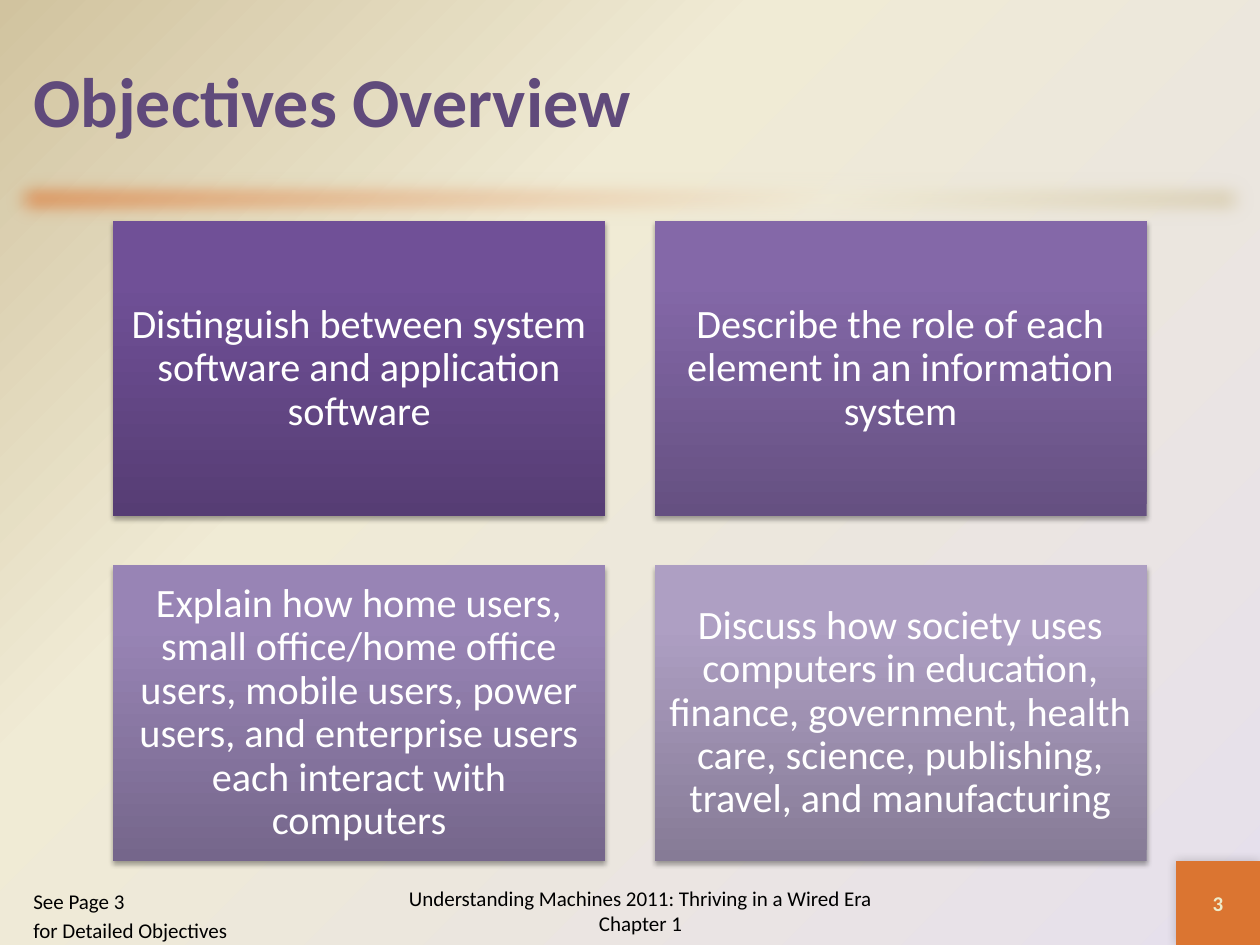
import dataclasses
import typing

import lxml.etree
import pptx
import pptx.dml.color
import pptx.enum.shapes
import pptx.enum.text
import pptx.oxml
import pptx.oxml.ns
import pptx.util

Pt = pptx.util.Pt
ALIGN = pptx.enum.text.PP_ALIGN
ANCHOR = pptx.enum.text.MSO_ANCHOR
Stops = tuple[tuple[int, str], ...]


@dataclasses.dataclass(frozen=True)
class Theme:
    font: str = "Calibri"
    title: str = "604A7B"
    text: str = "000000"
    card_text: str = "FFFFFF"
    number: str = "EEEBCA"
    accent: str = "DB7531"
    cream: str = "F0EBD5"
    sand: str = "D1C39F"
    lilac: str = "E6E0EC"
    title_size: float = 40
    card_size: float = 23
    small_size: float = 12


@dataclasses.dataclass(frozen=True)
class Box:
    left: float
    top: float
    width: float
    height: float


@dataclasses.dataclass(frozen=True)
class Style:
    size: float
    color: str
    bold: bool = False
    align: ALIGN = ALIGN.LEFT
    anchor: ANCHOR = ANCHOR.MIDDLE
    line_spacing: typing.Optional[float] = None


@dataclasses.dataclass(frozen=True)
class Card:
    text: str
    bottom: str
    middle: str
    top: str


@dataclasses.dataclass(frozen=True)
class Shadow:
    alpha: int
    blur: float
    distance: float
    angle: int


THEME = Theme()
CARDS = (
    Card("Distinguish between system software and application software",
         "563D74", "705097", "704F99"),
    Card("Describe the role of each element in an information system",
         "655081", "8468A8", "8467AA"),
    Card("Explain how home users, small office/home office users, mobile users, "
         "power users, and enterprise users each interact with computers",
         "75668B", "9884B5", "9984B7"),
    Card("Discuss how society uses computers in education, finance, government, "
         "health care, science, publishing, travel, and manufacturing",
         "867B96", "AE9FC3", "AE9FC4"),
)
SLIDE_W, SLIDE_H = 720, 540
CARD_W = 281.25
CARD_H = CARD_W * 0.6
CARD_GAP = CARD_W * 0.1
CARD_LEFT = (SLIDE_W - 2 * CARD_W - CARD_GAP) / 2
CARD_TOP = 126.2
NUMBER_SIDE = 48


def element(xml: str) -> lxml.etree._Element:
    tag, rest = xml.split(" ", 1)
    return pptx.oxml.parse_xml(f'{tag} {pptx.oxml.ns.nsdecls("a")} {rest}')


def gradient(fill: typing.Any, parent: lxml.etree._Element, stops: Stops, direction: str) -> None:
    fill.solid()
    marks = "".join(
        f'<a:gs pos="{pos * 1000}"><a:srgbClr val="{color}"/></a:gs>' for pos, color in stops
    )
    solid = parent.find(pptx.oxml.ns.qn("a:solidFill"))
    parent.replace(solid, element(
        f'<a:gradFill rotWithShape="1"><a:gsLst>{marks}</a:gsLst>{direction}</a:gradFill>'
    ))


def linear(angle: int) -> str:
    return f'<a:lin ang="{angle * 60000}" scaled="0"/>'


def add_effect(sp: typing.Any, xml: str) -> None:
    sp._element.spPr.find(pptx.oxml.ns.qn("a:effectLst")).append(element(xml))


def add_shadow(sp: typing.Any, shadow: Shadow) -> None:
    add_effect(sp, (
        f'<a:outerShdw blurRad="{Pt(shadow.blur)}" dist="{Pt(shadow.distance)}" '
        f'dir="{shadow.angle * 60000}" rotWithShape="0"><a:srgbClr val="000000">'
        f'<a:alpha val="{shadow.alpha * 1000}"/></a:srgbClr></a:outerShdw>'
    ))


def add_rect(s: typing.Any, box: Box) -> typing.Any:
    sp = s.shapes.add_shape(
        pptx.enum.shapes.MSO_SHAPE.RECTANGLE,
        Pt(box.left), Pt(box.top), Pt(box.width), Pt(box.height),
    )
    sp.shadow.inherit = False
    sp.line.fill.background()
    return sp


def write(sp: typing.Any, text: str, style: Style) -> typing.Any:
    tf = sp.text_frame
    tf.word_wrap = True
    tf.vertical_anchor = style.anchor
    tf.text = text
    for p in tf.paragraphs:
        p.alignment = style.align
        if style.line_spacing:
            p.line_spacing = style.line_spacing
        for r in p.runs:
            r.font.name = THEME.font
            r.font.size = Pt(style.size)
            r.font.bold = style.bold
            r.font.color.rgb = pptx.dml.color.RGBColor.from_string(style.color)
    return tf


def add_text(s: typing.Any, box: Box, text: str, style: Style) -> typing.Any:
    sp = s.shapes.add_textbox(Pt(box.left), Pt(box.top), Pt(box.width), Pt(box.height))
    return write(sp, text, style)


def add_card(s: typing.Any, card: Card, index: int) -> None:
    row, col = divmod(index, 2)
    sp = add_rect(s, Box(
        CARD_LEFT + col * (CARD_W + CARD_GAP),
        CARD_TOP + row * (CARD_H + CARD_GAP),
        CARD_W, CARD_H,
    ))
    stops = ((0, card.bottom), (80, card.middle), (100, card.top))
    gradient(sp.fill, sp._element.spPr, stops, linear(270))
    add_shadow(sp, Shadow(35, 3.1, 1.8, 90))
    tf = write(sp, card.text, Style(
        THEME.card_size, THEME.card_text, align=ALIGN.CENTER, line_spacing=0.9))
    tf.margin_left = tf.margin_right = tf.margin_top = tf.margin_bottom = Pt(7.2)


def main() -> None:
    prs = pptx.Presentation()
    prs.slide_width, prs.slide_height = Pt(SLIDE_W), Pt(SLIDE_H)
    s = prs.slides.add_slide(prs.slide_layouts[6])

    bg_fill = s.background.fill
    bg_fill.solid()
    gradient(
        bg_fill, s._element.find(".//" + pptx.oxml.ns.qn("p:bgPr")),
        ((0, THEME.lilac), (65, THEME.cream), (100, THEME.sand)),
        '<a:path path="circle"><a:fillToRect l="100000" t="100000"/></a:path>',
    )

    bar = add_rect(s, Box(0, 96, SLIDE_W, 36))
    gradient(bar.fill, bar._element.spPr,
             ((0, THEME.accent), (65, THEME.cream), (100, THEME.sand)), linear(45))
    add_effect(bar, f'<a:softEdge rad="{Pt(12.5)}"/>')

    number = add_rect(s, Box(
        SLIDE_W - NUMBER_SIDE, SLIDE_H - NUMBER_SIDE, NUMBER_SIDE, NUMBER_SIDE))
    number.fill.solid()
    number.fill.fore_color.rgb = pptx.dml.color.RGBColor.from_string(THEME.accent)
    add_shadow(number, Shadow(20, 6, 0, 225))
    write(number, "3", Style(THEME.small_size, THEME.number, True, ALIGN.CENTER))

    add_text(s, Box(12, 12, 696, 90), "Objectives Overview",
             Style(THEME.title_size, THEME.title, True))
    for index, card in enumerate(CARDS):
        add_card(s, card, index)

    add_text(s, Box(216, 500.4, 300, 39.6),
             "Understanding Machines 2011: Thriving in a Wired Era Chapter 1",
             Style(THEME.small_size, THEME.text, align=ALIGN.CENTER))
    tf = add_text(s, Box(12, 504, 132, 36), "See Page 3\nfor Detailed Objectives",
                  Style(THEME.small_size, THEME.text, anchor=ANCHOR.TOP))
    tf.paragraphs[1].space_before = Pt(2.4)

    prs.save("out.pptx")


if __name__ == "__main__":
    main()
